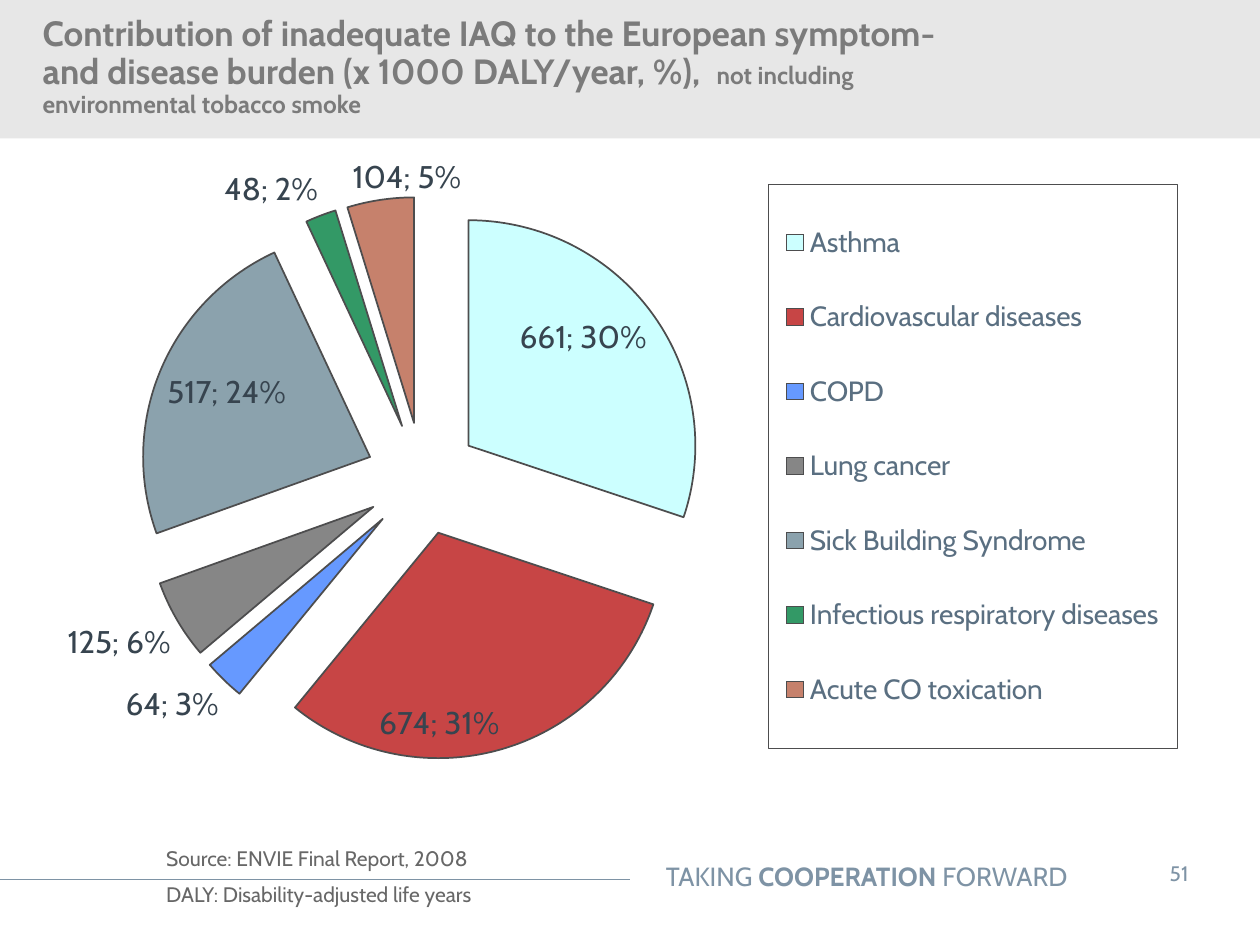
from dataclasses import dataclass

from lxml.etree import SubElement
from pptx import Presentation
from pptx.chart.data import CategoryChartData
from pptx.dml.color import RGBColor
from pptx.enum.chart import XL_CHART_TYPE as ChartType
from pptx.enum.chart import XL_LABEL_POSITION as LabelPos
from pptx.enum.chart import XL_LEGEND_POSITION as LegendPos
from pptx.enum.shapes import MSO_CONNECTOR as Connector
from pptx.enum.shapes import MSO_SHAPE as Shape
from pptx.enum.text import MSO_ANCHOR as Anchor
from pptx.enum.text import PP_ALIGN as Align
from pptx.oxml import parse_xml
from pptx.oxml.ns import nsdecls, qn
from pptx.util import Cm, Pt

FONT = "Cabin"
COLORS = {
    "band": "E7E7E7", "title": "7B7B7B", "footer": "7E93A5", "source": "676767",
    "legend": "5A6F81", "label": "37444F", "outline": "4D4D4E",
}


@dataclass
class Disease:
    """One slice of the pie and the place of its label."""
    name: str
    burden: int
    color: str
    position: LabelPos
    shift: tuple[float, float] | None = None


@dataclass
class Words:
    """A stretch of text in one size and weight."""
    text: str
    size: float
    bold: bool = False


DISEASES = [
    Disease("Asthma", 661, "CCFFFF", LabelPos.INSIDE_END),
    Disease("Cardiovascular diseases", 674, "C74545", LabelPos.INSIDE_END),
    Disease("COPD", 64, "6699FF", LabelPos.OUTSIDE_END),
    Disease("Lung cancer", 125, "868686", LabelPos.OUTSIDE_END),
    Disease("Sick Building Syndrome", 517, "8BA2AD", LabelPos.INSIDE_END),
    Disease("Infectious respiratory diseases", 48, "339966", LabelPos.OUTSIDE_END),
    Disease("Acute CO toxication", 104, "C6816C", LabelPos.OUTSIDE_END, (0.07, 0)),
]


def rgb(name: str) -> RGBColor:
    """Look up a named colour."""
    return RGBColor.from_string(COLORS[name])


def style_font(font, size: float, color: str, bold: bool = False) -> None:
    """Set face, size, colour and weight."""
    font.name, font.size, font.bold = FONT, Pt(size), bold
    font.color.rgb = rgb(color)


def add_text(slide, box: tuple, lines: list[list[Words]], color: str,
             align: Align = Align.LEFT, anchor: Anchor = Anchor.TOP,
             inset: tuple = (0.25, 0.13)):
    """Add a wrapped text box and return its frame."""
    frame = slide.shapes.add_textbox(*map(Cm, box)).text_frame
    frame.word_wrap, frame.vertical_anchor = True, anchor
    frame.margin_left = frame.margin_right = Cm(inset[0])
    frame.margin_top = frame.margin_bottom = Cm(inset[1])
    for index, line in enumerate(lines):
        paragraph = frame.add_paragraph() if index else frame.paragraphs[0]
        paragraph.alignment = align
        if index:
            paragraph.space_before = Pt(6)
        for words in line:
            run = paragraph.add_run()
            run.text = words.text
            style_font(run.font, words.size, color, words.bold)
    return frame


def manual_layout(**values):
    """Build a chart layout element from fractions of the chart."""
    fields = "".join(f'<c:{key} val="{value}"/>' for key, value in values.items())
    return parse_xml(f'<c:layout {nsdecls("c")}><c:manualLayout>{fields}'
                     '</c:manualLayout></c:layout>')


def add_header(slide) -> None:
    """Draw the grey band and the title."""
    band = slide.shapes.add_shape(Shape.RECTANGLE, 0, 0, Cm(25.4), Cm(2.79))
    band.shadow.inherit = False
    band.fill.solid()
    band.fill.fore_color.rgb = rgb("band")
    band.line.fill.background()
    title = [Words("Contribution of inadequate IAQ to the European symptom- and disease "
                   "burden (x 1000 DALY/year, %),  ", 20, True),
             Words("not including environmental tobacco smoke", 14, True)]
    frame = add_text(slide, (0, 0, 19.3, 2.72), [title], "title",
                     anchor=Anchor.MIDDLE, inset=(0.25, 0.25))
    paragraph = frame.paragraphs[0]
    paragraph.line_spacing = 0.9
    paragraph_format = paragraph._p.get_or_add_pPr()
    paragraph_format.set("marL", str(Cm(0.61)))
    paragraph_format.set("indent", "0")


def add_footer(slide) -> None:
    """Draw the rule, the motto, the page number and the source."""
    rule = slide.shapes.add_connector(Connector.STRAIGHT, 0, Cm(17.73), Cm(12.7), Cm(17.73))
    rule.line.color.rgb, rule.line.width = rgb("footer"), Pt(0.75)
    SubElement(rule._element.spPr, qn("a:effectLst"))
    motto = [Words("TAKING ", 15), Words("COOPERATION", 15, True), Words(" FORWARD", 15)]
    add_text(slide, (9.86, 17.22, 11.91, 0.89), [motto], "footer", Align.RIGHT)
    add_text(slide, (22.83, 17.09, 1.88, 1.02), [[Words("51", 12)]], "footer",
             Align.CENTER, inset=(0.5, 0.25))
    notes = ["Source: ENVIE Final Report, 2008", "DALY: Disability-adjusted life years"]
    add_text(slide, (3.1, 16.92, 19.89, 1.47), [[Words(note, 12)] for note in notes], "source")


def style_slices(series) -> None:
    """Colour, outline, explode and label each slice."""
    series.format.line.color.rgb, series.format.line.width = rgb("outline"), Pt(1)
    explosion = parse_xml(f'<c:explosion {nsdecls("c")} val="25"/>')
    series._element.find(qn("c:spPr")).addnext(explosion)
    for index, disease in enumerate(DISEASES):
        point = series.points[index]
        point.format.fill.solid()
        point.format.fill.fore_color.rgb = RGBColor.from_string(disease.color)
        point.format.line.color.rgb, point.format.line.width = rgb("outline"), Pt(1)
        style_font(point.data_label.font, 18, "label")
        point.data_label.position = disease.position
    for disease, label in zip(DISEASES, series._element.iter(qn("c:dLbl"))):
        label.find(qn("c:showPercent")).set("val", "1")
        SubElement(label, qn("c:separator")).text = "; "
        if disease.shift:
            x, y = disease.shift
            label.find(qn("c:idx")).addnext(manual_layout(x=x, y=y))


def add_pie(slide) -> None:
    """Add the exploded pie with its framed legend."""
    data = CategoryChartData()
    data.categories = [disease.name for disease in DISEASES]
    data.add_series("Series 1", [disease.burden for disease in DISEASES])
    box = map(Cm, (0.61, 3.12, 23.6, 12.85))
    chart = slide.shapes.add_chart(ChartType.PIE, *box, data).chart
    chart.has_title = False
    chart.font.name, chart.font.size = "Arial", Pt(10)
    chart.plots[0].vary_by_categories = True
    style_slices(chart.plots[0].series[0])
    plot_area = chart.element.find(".//" + qn("c:plotArea"))
    for old in plot_area.findall(qn("c:layout")):
        plot_area.remove(old)
    plot_area.insert(0, manual_layout(layoutTarget="inner", xMode="edge", yMode="edge",
                                      x=0.09, y=0.06, w=0.49, h=0.89))
    chart.has_legend = True
    legend = chart.legend
    legend.position, legend.include_in_layout = LegendPos.RIGHT, True
    style_font(legend.font, 16, "legend")
    element = chart.element.find(".//" + qn("c:legend"))
    for old in element.findall(qn("c:layout")):
        element.remove(old)
    element.find(qn("c:legendPos")).addnext(
        manual_layout(xMode="edge", yMode="edge", x=0.63, y=0.04, w=0.35, h=0.89))
    element.find(qn("c:overlay")).addnext(parse_xml(
        f'<c:spPr {nsdecls("c", "a")}><a:ln w="{Pt(0.25)}"><a:solidFill>'
        f'<a:srgbClr val="{COLORS["outline"]}"/></a:solidFill></a:ln></c:spPr>'))


def main() -> None:
    """Build the slide and save it."""
    deck = Presentation()
    deck.slide_width, deck.slide_height = Cm(25.4), Cm(19.05)
    slide = deck.slides.add_slide(deck.slide_layouts[6])
    add_header(slide)
    add_pie(slide)
    add_footer(slide)
    deck.save("out.pptx")


if __name__ == "__main__":
    main()
